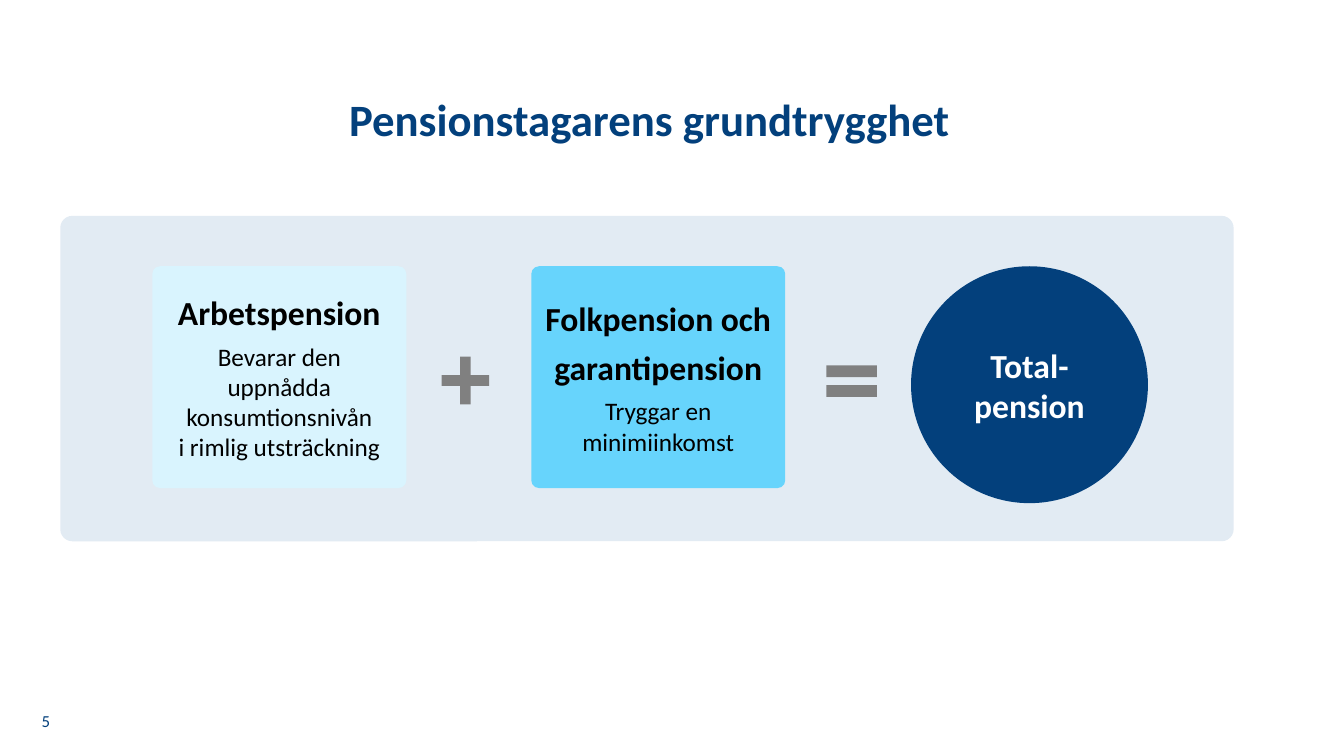
from pptx import Presentation
from pptx.dml.color import RGBColor
from pptx.enum.shapes import MSO_SHAPE
from pptx.enum.text import MSO_ANCHOR, MSO_AUTO_SIZE, PP_ALIGN
from pptx.util import Cm, Pt

ROUND = MSO_SHAPE.ROUNDED_RECTANGLE
OVAL = MSO_SHAPE.OVAL
PLUS = MSO_SHAPE.CROSS
EQUAL = MSO_SHAPE.MATH_EQUAL
TOP = MSO_ANCHOR.TOP
MIDDLE = MSO_ANCHOR.MIDDLE
CENTER = PP_ALIGN.CENTER
NO_FIT = MSO_AUTO_SIZE.NONE

FONT = "Calibri"
NAVY, BLACK, WHITE, GREY = "03407C", "000000", "FFFFFF", "808080"
PANEL, PALE, SKY = "E2EBF3", "D9F4FE", "67D4FC"

# Pension boxes: fill, headings, description
BOXES = [
    (PALE, ["Arbetspension"],
     "Bevarar den uppnådda konsumtionsnivån\vi rimlig utsträckning"),
    (SKY, ["Folkpension och", "garantipension"], "Tryggar en minimiinkomst"),
]
BOX_LEFT, BOX_STEP, BOX_TOP = 3.84, 9.55, 6.71


def rgb(color):
    return RGBColor.from_string(color)


def write(shape, lines, color, anchor=MIDDLE):
    """Fill a shape with lines given as (text, size, bold, space after)."""
    frame = shape.text_frame
    frame.word_wrap = True
    frame.auto_size = NO_FIT
    frame.vertical_anchor = anchor
    for i, (text, size, bold, after) in enumerate(lines):
        para = frame.add_paragraph() if i else frame.paragraphs[0]
        para.text = text
        para.alignment = CENTER
        para.space_before = Pt(0)
        para.space_after = Pt(after)
        font = para.font
        font.name, font.size, font.bold = FONT, Pt(size), bold
        font.color.rgb = rgb(color)


def draw(slide, kind, left, top, width, height, fill, adjust=()):
    shape = slide.shapes.add_shape(
        kind, Cm(left), Cm(top), Cm(width), Cm(height))
    shape.shadow.inherit = False
    shape.fill.solid()
    shape.fill.fore_color.rgb = rgb(fill)
    shape.line.fill.background()
    for i, value in enumerate(adjust):
        shape.adjustments[i] = value
    return shape


def set_title(slide, text):
    title = slide.shapes.title
    title.left, title.top = Cm(0), Cm(2.34)
    title.width, title.height = Cm(32.74), Cm(1.73)
    write(title, [(text, 32, True, 0)], NAVY, TOP)
    title.text_frame.paragraphs[0].line_spacing = 0.9


def add_box(slide, left, fill, heads, body):
    box = draw(slide, ROUND, left, BOX_TOP, 6.4, 5.59, fill, [0.035])
    lines = [(head, 24, True, 6) for head in heads]
    write(box, lines + [(body, 18, False, 0)], BLACK)


def add_number(slide, text):
    box = slide.shapes.add_textbox(Cm(0.51), Cm(17.65), Cm(1.3), Cm(1.02))
    write(box, [(text, 12, False, 0)], NAVY)


def main():
    deck = Presentation()
    deck.slide_width, deck.slide_height = Cm(33.87), Cm(19.05)
    slide = deck.slides.add_slide(deck.slide_layouts[5])
    set_title(slide, "Pensionstagarens grundtrygghet")

    # Background panel
    draw(slide, ROUND, 1.52, 5.44, 29.57, 8.2, PANEL, [0.037])

    # Sum: box + box = circle
    for i, (fill, heads, body) in enumerate(BOXES):
        add_box(slide, BOX_LEFT + i * BOX_STEP, fill, heads, body)
    draw(slide, PLUS, 11.13, 8.99, 1.2, 1.2, GREY, [0.388])
    draw(slide, EQUAL, 20.6, 8.74, 1.73, 1.73, GREY, [0.172, 0.118])
    total = draw(slide, OVAL, 22.96, BOX_TOP, 5.97, 5.97, NAVY)
    write(total, [(word, 24, True, 0) for word in ("Total-", "pension")], WHITE)

    add_number(slide, "5")
    deck.save("out.pptx")


if __name__ == "__main__":
    main()
